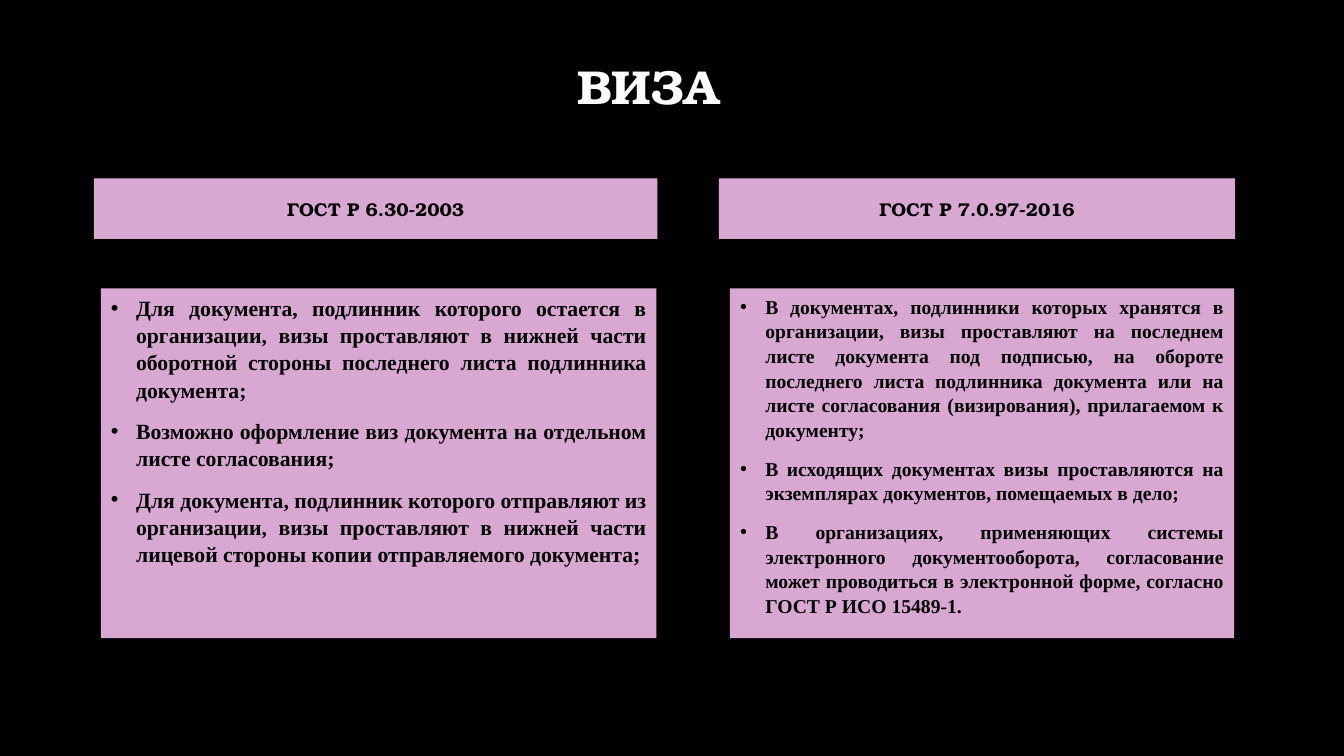
from lxml import etree
from pptx import Presentation
from pptx.dml.color import RGBColor
from pptx.enum.text import MSO_ANCHOR, MSO_AUTO_SIZE, PP_ALIGN
from pptx.oxml.ns import qn
from pptx.util import Inches, Pt

BLACK = RGBColor(0x00, 0x00, 0x00)
WHITE = RGBColor(0xFF, 0xFF, 0xFF)
PINK = RGBColor(0xD9, 0xA8, 0xD2)
CENTER, JUSTIFY = PP_ALIGN.CENTER, PP_ALIGN.JUSTIFY
TOP, MIDDLE = MSO_ANCHOR.TOP, MSO_ANCHOR.MIDDLE
NO_AUTOFIT = MSO_AUTO_SIZE.NONE

HEADING_FONT = "TeX Gyre Bonum"
LIST_FONT = "Times New Roman"
COMPARISON_LAYOUT = 4

OLD_STANDARD = [
    "Для документа, подлинник которого остается в организации, визы проставляют "
    "в нижней части оборотной стороны последнего листа подлинника документа;",
    "Возможно оформление виз документа на отдельном листе согласования;",
    "Для документа, подлинник которого отправляют из организации, визы проставляют "
    "в нижней части лицевой стороны копии отправляемого документа;",
]
NEW_STANDARD = [
    "В документах, подлинники которых хранятся в организации, визы проставляют "
    "на последнем листе документа под подписью, на обороте последнего листа "
    "подлинника документа или на листе согласования (визирования), прилагаемом "
    "к документу;",
    "В исходящих документах визы проставляются на экземплярах документов, "
    "помещаемых в дело;",
    "В организациях, применяющих системы электронного документооборота, "
    "согласование может проводиться в электронной форме, согласно "
    "ГОСТ Р ИСО 15489-1.",
]


def place(placeholder, left, top, width, height, anchor):
    placeholder.left, placeholder.top = Inches(left), Inches(top)
    placeholder.width, placeholder.height = Inches(width), Inches(height)
    frame = placeholder.text_frame
    frame.word_wrap = True
    frame.auto_size = NO_AUTOFIT
    frame.vertical_anchor = anchor
    return frame


def format_paragraph(paragraph, font_name, size, color, alignment):
    paragraph.alignment = alignment
    paragraph.space_before = Pt(0)
    for run in paragraph.runs:
        run.font.name = font_name
        run.font.size = Pt(size)
        run.font.bold = True
        run.font.color.rgb = color


def fill_pink(placeholder):
    placeholder.fill.solid()
    placeholder.fill.fore_color.rgb = PINK


def add_heading(placeholder, text, box, size, color):
    frame = place(placeholder, *box, MIDDLE)
    frame.text = text
    format_paragraph(frame.paragraphs[0], HEADING_FONT, size, color, CENTER)


def add_bullet(paragraph):
    properties = paragraph._p.get_or_add_pPr()
    properties.set("marL", str(Inches(0.25)))
    properties.set("indent", str(Inches(-0.25)))
    font = etree.SubElement(properties, qn("a:buFont"))
    font.set("typeface", "Arial")
    etree.SubElement(properties, qn("a:buChar")).set("char", "•")


def add_list(placeholder, items, box, size):
    fill_pink(placeholder)
    frame = place(placeholder, *box, TOP)
    frame.text = "\n".join(items)
    for paragraph in frame.paragraphs:
        format_paragraph(paragraph, LIST_FONT, size, BLACK, JUSTIFY)
        paragraph.space_before = Pt(10)
        paragraph.line_spacing = 1.05
        add_bullet(paragraph)


def main():
    presentation = Presentation()
    presentation.slide_width = Inches(13.33)
    presentation.slide_height = Inches(7.5)
    slide = presentation.slides.add_slide(presentation.slide_layouts[COMPARISON_LAYOUT])
    slide.background.fill.solid()
    slide.background.fill.fore_color.rgb = BLACK
    title, old_name, old_list, new_name, new_list = list(slide.placeholders)[:5]

    # Title
    add_heading(title, "ВИЗА", (0.77, 0.12, 11.32, 1.45), 34, WHITE)

    # Names of the two standards
    for name, text, left, width in (
        (old_name, "ГОСТ Р 6.30-2003", 0.93, 5.59),
        (new_name, "ГОСТ Р 7.0.97-2016", 7.13, 5.12),
    ):
        fill_pink(name)
        add_heading(name, text, (left, 1.77, width, 0.6), 13.2, BLACK)

    # Rules of each standard
    add_list(old_list, OLD_STANDARD, (1, 2.86, 5.51, 3.47), 15.5)
    add_list(new_list, NEW_STANDARD, (7.24, 2.86, 5, 3.47), 14)

    presentation.save("out.pptx")


if __name__ == "__main__":
    main()
